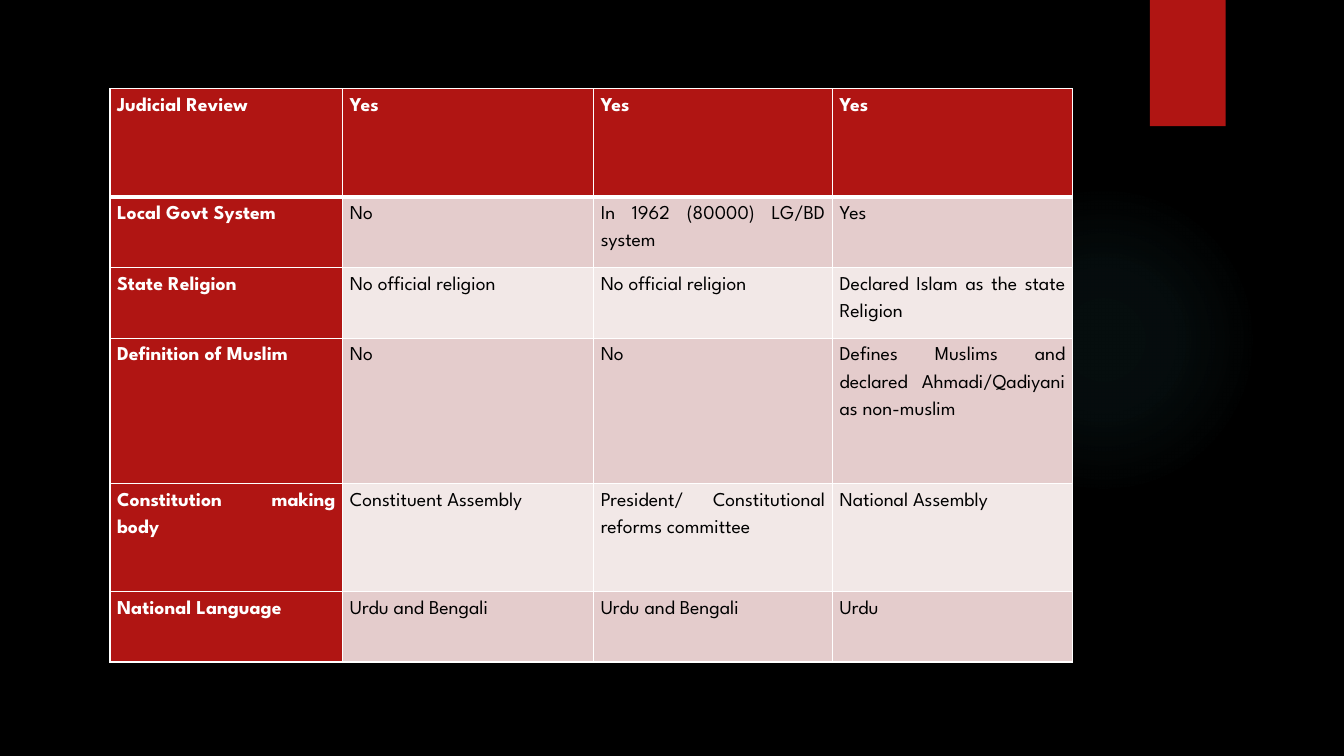
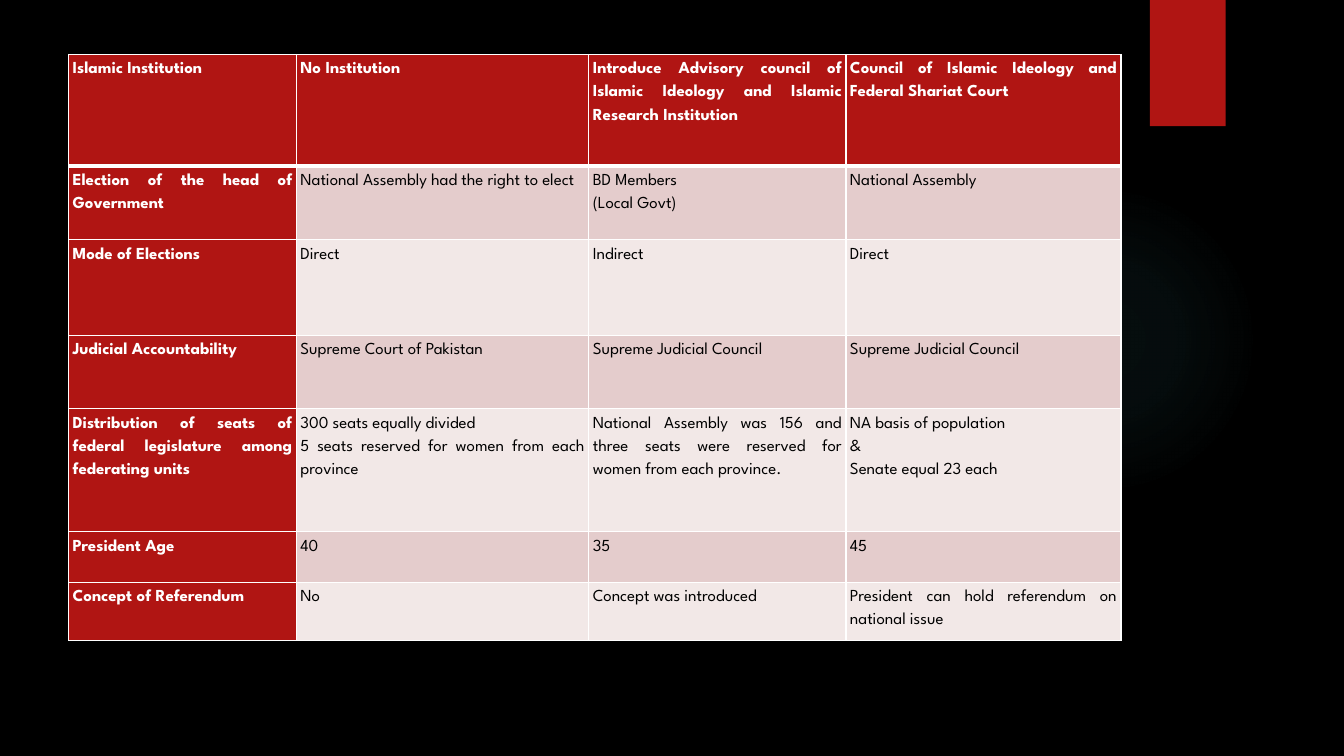
"""Build two slides comparing three constitutions in tables."""
from pptx import Presentation
from pptx.dml.color import RGBColor
from pptx.enum.shapes import MSO_SHAPE as SHAPE
from pptx.enum.text import PP_ALIGN as ALIGN
from pptx.oxml import parse_xml
from pptx.oxml.ns import nsdecls, qn
from pptx.util import Cm, Pt

BLACK = RGBColor(0x00, 0x00, 0x00)
WHITE = RGBColor(0xFF, 0xFF, 0xFF)
RED = RGBColor(0xB0, 0x15, 0x13)
GLOW = RGBColor(0x50, 0xB9, 0xC1)
BANDS = [RGBColor(0xF2, 0xE8, 0xE7), RGBColor(0xE4, 0xCC, 0xCC)]
FONT = "League Spartan"

TABLES = [
    {
        "left": 2.77, "top": 2.24, "size": 14, "inset": 0.18,
        "cols": [5.87, 6.32, 6.02, 6.05],
        "rows": [2.72, 1.78, 1.78, 3.66, 2.72, 1.78],
        "cells": [
            ["Judicial Review", "Yes", "Yes", "Yes"],
            ["Local Govt System", "No", "In 1962 (80000) LG/BD system", "Yes"],
            ["State Religion", "No official religion", "No official religion",
             "Declared Islam as the state Religion"],
            ["Definition of Muslim", "No", "No",
             "Defines Muslims and declared Ahmadi/Qadiyani as non-muslim"],
            ["Constitution making body", "Constituent Assembly",
             "President/ Constitutional reforms committee", "National Assembly"],
            ["National Language", "Urdu and Bengali", "Urdu and Bengali", "Urdu"],
        ],
    },
    {
        "left": 1.73, "top": 1.37, "size": 12, "inset": 0.1,
        "cols": [5.74, 7.37, 6.48, 6.93],
        "rows": [2.82, 1.85, 2.41, 1.85, 3.1, 1.27, 1.47],
        "cells": [
            ["Islamic Institution", "No Institution",
             "Introduce Advisory council of Islamic Ideology and Islamic Research Institution",
             "Council of Islamic Ideology and Federal Shariat Court"],
            ["Election of the head of Government", "National Assembly had the right to elect",
             "BD Members\n(Local Govt)", "National Assembly"],
            ["Mode of Elections", "Direct", "Indirect", "Direct"],
            ["Judicial Accountability", "Supreme Court of Pakistan",
             "Supreme Judicial Council", "Supreme Judicial Council"],
            ["Distribution of seats of federal legislature among federating units",
             "300 seats equally divided\n5 seats reserved for women from each province",
             "National Assembly was 156 and three seats were reserved for women from each province.",
             "NA basis of population\n&\nSenate equal 23 each"],
            ["President Age", "40", "35", "45"],
            ["Concept of Referendum", "No", "Concept was introduced",
             "President can hold referendum on national issue"],
        ],
    },
]


def add_plain_shape(s, kind, left, top, width, height, color):
    sp = s.shapes.add_shape(kind, Cm(left), Cm(top), Cm(width), Cm(height))
    sp.shadow.inherit = False
    sp.fill.solid()
    sp.fill.fore_color.rgb = color
    sp.line.fill.background()
    return sp


def add_border(cell, side, width):
    cell._tc.get_or_add_tcPr().append(parse_xml(
        f'<a:{side} {nsdecls("a")} w="{Pt(width)}"><a:solidFill>'
        f'<a:srgbClr val="{WHITE}"/></a:solidFill></a:{side}>'))


prs = Presentation()
prs.slide_width, prs.slide_height = Cm(33.87), Cm(19.05)
fill = prs.slide_master.background.fill
fill.solid()
fill.fore_color.rgb = BLACK

for spec_table in TABLES:
    s = prs.slides.add_slide(prs.slide_layouts[6])

    glow = add_plain_shape(s, SHAPE.OVAL, 23.9, 4.65, 7.82, 7.82, GLOW)
    stops = "".join(
        f'<a:gs pos="{pos * 1000}"><a:srgbClr val="{GLOW}">'
        f'<a:alpha val="{alpha * 1000}"/></a:srgbClr></a:gs>'
        for pos, alpha in [(0, 7), (36, 6), (69, 0), (100, 0)])
    gradient = parse_xml(
        f'<a:gradFill {nsdecls("a")} rotWithShape="1"><a:gsLst>{stops}</a:gsLst>'
        '<a:path path="circle"><a:fillToRect l="50000" t="50000" r="50000" b="50000"/>'
        '</a:path></a:gradFill>')
    spPr = glow._element.spPr
    spPr.replace(spPr.find(qn("a:solidFill")), gradient)

    add_plain_shape(s, SHAPE.RECTANGLE, 28.98, 0, 1.91, 3.18, RED)

    cols, rows = spec_table["cols"], spec_table["rows"]
    table = s.shapes.add_table(
        len(rows), len(cols), Cm(spec_table["left"]), Cm(spec_table["top"]),
        Cm(sum(cols)), Cm(sum(rows))).table
    table.first_col = True
    table.horz_banding = False
    for col, width in zip(table.columns, cols):
        col.width = Cm(width)
    for row, height in zip(table.rows, rows):
        row.height = Cm(height)

    for i, texts in enumerate(spec_table["cells"]):
        for j, text in enumerate(texts):
            cell = table.cell(i, j)
            heading = i == 0 or j == 0
            cell.margin_left = cell.margin_right = Cm(spec_table["inset"])
            cell.margin_top = cell.margin_bottom = 0
            add_border(cell, "lnL", 1)
            add_border(cell, "lnR", 1)
            add_border(cell, "lnT", 3 if i == 1 else 1)
            add_border(cell, "lnB", 3 if i == 0 else 1)
            cell.fill.solid()
            cell.fill.fore_color.rgb = RED if heading else BANDS[i % 2]
            cell.text_frame.text = text
            for p in cell.text_frame.paragraphs:
                p.alignment = ALIGN.JUSTIFY
                p.line_spacing = 1.5
                p.font.name = FONT
                p.font.size = Pt(spec_table["size"])
                p.font.bold = heading
                p.font.color.rgb = WHITE if heading else BLACK

prs.save("out.pptx")
